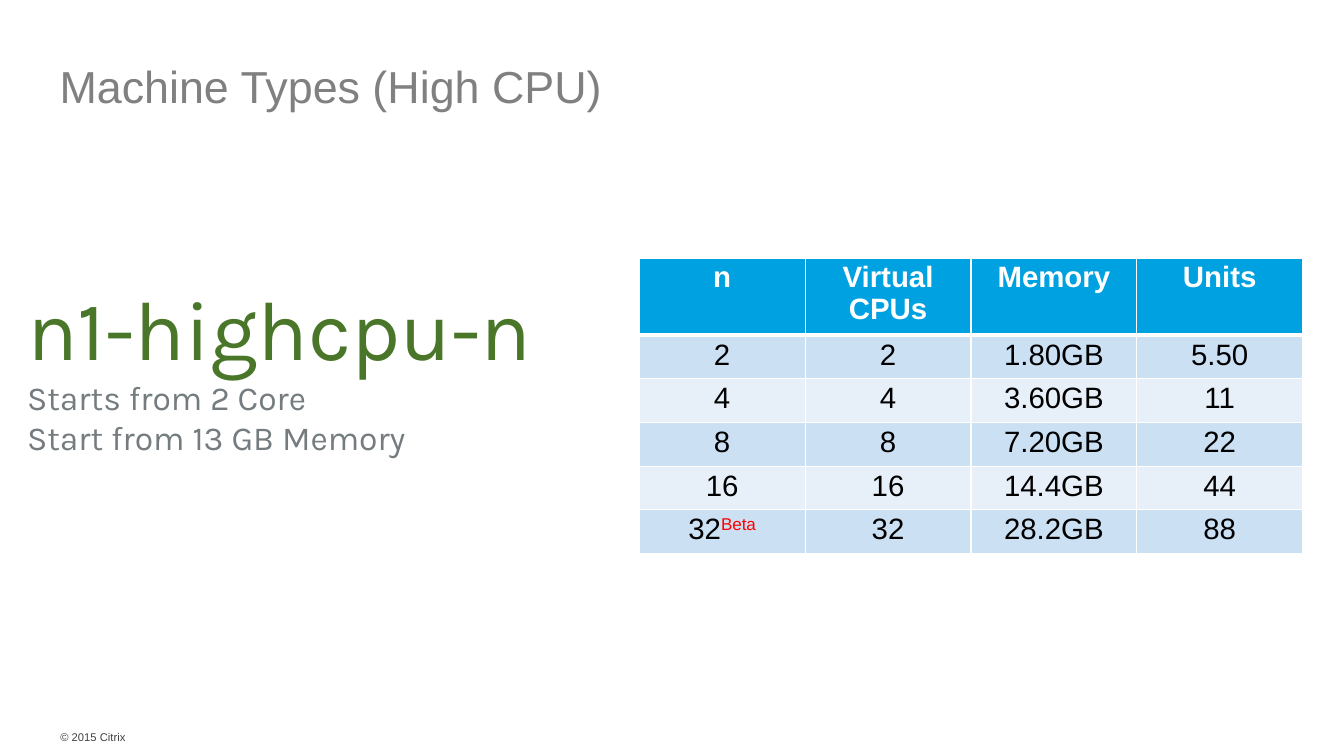
from lxml.etree import SubElement
from pptx import Presentation
from pptx.dml.color import RGBColor
from pptx.enum.text import MSO_ANCHOR as Anchor, MSO_AUTO_SIZE as AutoSize, PP_ALIGN as Align
from pptx.oxml.ns import qn
from pptx.util import Inches, Pt

COLORS = {
    "title": "808080",
    "footer": "414141",
    "machine": "497629",
    "detail": "747C7F",
    "header": "00A1E0",
    "odd": "CCE0F3",
    "even": "E7F0F9",
    "white": "FFFFFF",
    "black": "000000",
    "beta": "FF0000",
}

MACHINE_ROWS = [
    ["n", "Virtual CPUs", "Memory", "Units"],
    ["2", "2", "1.80GB", "5.50"],
    ["4", "4", "3.60GB", "11"],
    ["8", "8", "7.20GB", "22"],
    ["16", "16", "14.4GB", "44"],
    ["32", "32", "28.2GB", "88"],
]


def style(font, size, color, name="Arial", bold=False):
    font.name = name
    font.size = Pt(size)
    font.bold = bold
    font.color.rgb = RGBColor.from_string(COLORS[color])


def add_title(page, left, top, width, height):
    title = page.shapes.title
    title.left, title.top = Inches(left), Inches(top)
    title.width, title.height = Inches(width), Inches(height)
    frame = title.text_frame
    frame.text = "Machine Types (High CPU)"
    frame.auto_size = AutoSize.NONE
    frame.vertical_anchor = Anchor.BOTTOM
    para = frame.paragraphs[0]
    para.alignment = Align.LEFT
    para.line_spacing = Pt(32)
    style(para.runs[0].font, 32, "title")


def add_text(page, left, top, width, height, lines):
    box = page.shapes.add_textbox(Inches(left), Inches(top), Inches(width), Inches(height))
    frame = box.text_frame
    frame.word_wrap = True
    frame.text = "\n".join(text for text, *_ in lines)
    for para, (_, size, color, name) in zip(frame.paragraphs, lines):
        style(para.runs[0].font, size, color, name)


def add_borders(cell, bottom):
    properties = cell._tc.get_or_add_tcPr()
    for position, (side, points) in enumerate(
        [("lnL", 1), ("lnR", 1), ("lnT", 1), ("lnB", bottom)]
    ):
        line = properties.makeelement(qn(f"a:{side}"), {"w": str(Pt(points))})
        fill = SubElement(line, qn("a:solidFill"))
        SubElement(fill, qn("a:srgbClr"), val=COLORS["white"])
        properties.insert(position, line)


def fill_cell(cell, text, row):
    is_header = row == 0
    shade = "header" if is_header else "odd" if row % 2 else "even"
    cell.fill.solid()
    cell.fill.fore_color.rgb = RGBColor.from_string(COLORS[shade])
    add_borders(cell, 3 if is_header else 1)
    cell.text_frame.text = text
    para = cell.text_frame.paragraphs[0]
    para.alignment = Align.CENTER
    para.line_spacing = 0.95
    style(para.runs[0].font, 21, "white" if is_header else "black", bold=is_header)


def add_beta_mark(cell):
    span = cell.text_frame.paragraphs[0].add_run()
    span.text = "Beta"
    style(span.font, 21, "beta")
    span._r.get_or_add_rPr().set("baseline", "30000")


def add_machine_table(page, left, top, width, header_height, row_height):
    height = header_height + row_height * (len(MACHINE_ROWS) - 1)
    table = page.shapes.add_table(
        len(MACHINE_ROWS), len(MACHINE_ROWS[0]),
        Inches(left), Inches(top), Inches(width), Inches(height),
    ).table
    for row, values in enumerate(MACHINE_ROWS):
        table.rows[row].height = Inches(row_height if row else header_height)
        for column, text in enumerate(values):
            fill_cell(table.cell(row, column), text, row)
    add_beta_mark(table.cell(len(MACHINE_ROWS) - 1, 0))


def build_machine_page(deck):
    page = deck.slides.add_slide(deck.slide_layouts[5])
    add_text(page, 0.5, 7.2, 3.91, 0.24, [("© 2015 Citrix", 8, "footer", "Arial")])
    add_title(page, 0.49, 0.09, 12.37, 1.08)
    add_machine_table(page, 6.34, 2.56, 6.58, 0.73, 0.43)
    add_text(page, 0.17, 2.69, 6.66, 1.92, [
        ("n1-highcpu-n", 60, "machine", "Karla"),
        ("Starts from 2 Core", 24, "detail", "Karla"),
        ("Start from 13 GB Memory", 24, "detail", "Karla"),
    ])


def main():
    deck = Presentation()
    deck.slide_width, deck.slide_height = Inches(13.33), Inches(7.5)
    build_machine_page(deck)
    deck.save("out.pptx")


if __name__ == "__main__":
    main()
